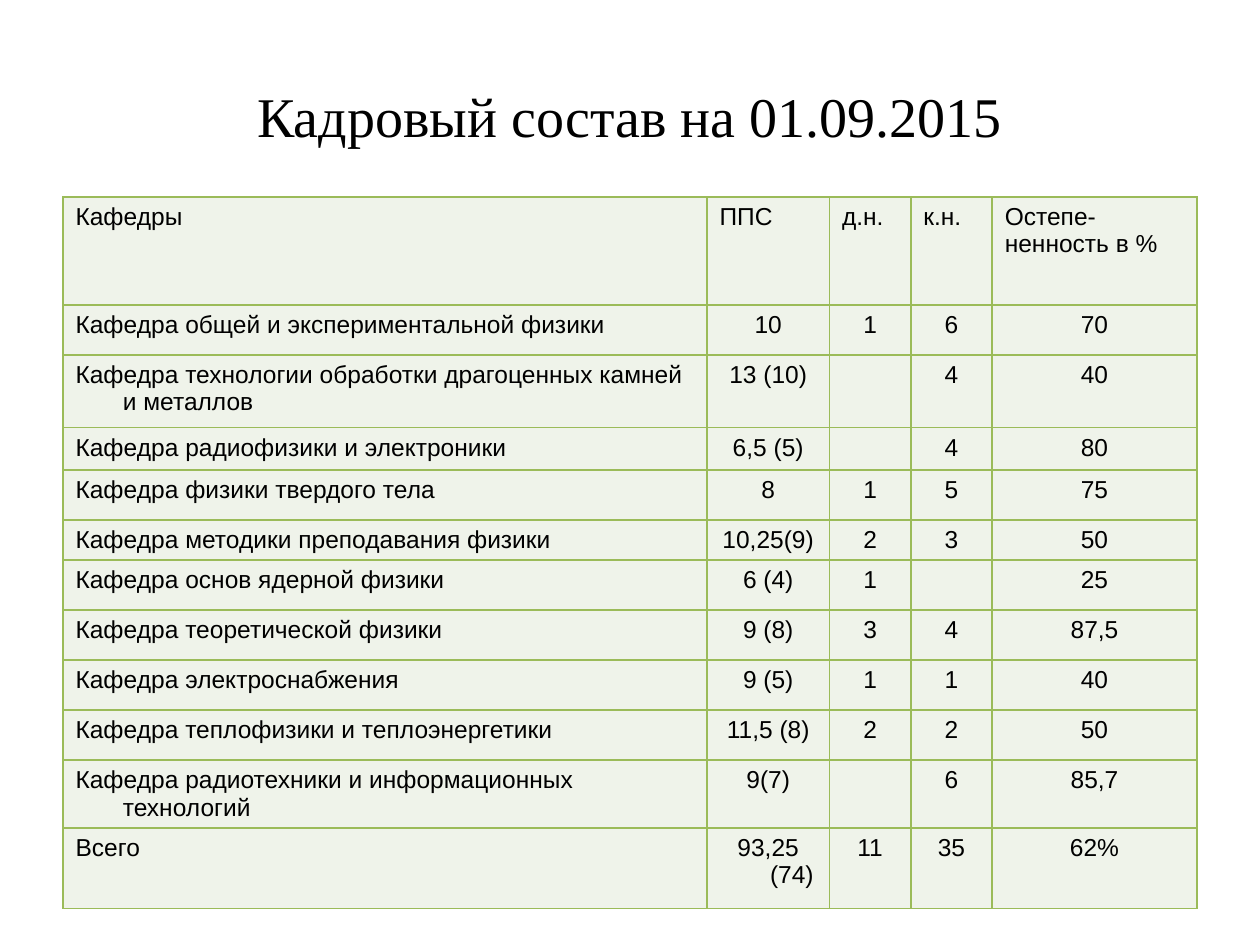
from pptx import Presentation
from pptx.dml.color import RGBColor
from pptx.enum.text import MSO_ANCHOR, PP_ALIGN
from pptx.oxml.ns import qn
from pptx.util import Pt
from lxml.etree import SubElement

BLACK = RGBColor(0x00, 0x00, 0x00)
GREEN = RGBColor(0x9B, 0xBB, 0x59)
PALE = RGBColor(0xEF, 0xF3, 0xEA)

TITLE = "Кадровый состав на 01.09.2015"
HEADER = ("Кафедры", "ППС", "д.н.", "к.н.", "Остепе-\nненность в %")
STAFF = [
    ("Кафедра общей и экспериментальной физики", "10", "1", "6", "70"),
    ("Кафедра технологии обработки драгоценных камней и металлов", "13 (10)", "", "4", "40"),
    ("Кафедра радиофизики и электроники", "6,5 (5)", "", "4", "80"),
    ("Кафедра физики твердого тела", "8", "1", "5", "75"),
    ("Кафедра методики преподавания физики", "10,25(9)", "2", "3", "50"),
    ("Кафедра основ ядерной физики", "6 (4)", "1", "", "25"),
    ("Кафедра теоретической физики", "9 (8)", "3", "4", "87,5"),
    ("Кафедра электроснабжения", "9 (5)", "1", "1", "40"),
    ("Кафедра теплофизики и теплоэнергетики", "11,5 (8)", "2", "2", "50"),
    ("Кафедра радиотехники и информационных технологий", "9(7)", "", "6", "85,7"),
    ("Всего", "93,25 (74)", "11", "35", "62%"),
]
COL_WIDTHS = (368, 70, 46.5, 46.5, 117)
ROW_HEIGHTS = (61.7, 28.6, 41.5, 22.5, 28.6, 22.5, 28.6, 28.6, 28.6, 28.6, 38, 46)
LEFT, TABLE_TOP = 36, 112.5
TEXT_SIZE = Pt(14)
HANGING = Pt(27)


def format_run(r, font, size):
    r.font.name = font
    r.font.size = size
    r.font.color.rgb = BLACK


def add_borders(cell):
    tcPr = cell._tc.get_or_add_tcPr()
    for i, side in enumerate(("a:lnL", "a:lnR", "a:lnT", "a:lnB")):
        ln = tcPr.makeelement(qn(side), {"w": str(Pt(1))})
        fill = SubElement(ln, qn("a:solidFill"))
        SubElement(fill, qn("a:srgbClr"), val=str(GREEN))
        tcPr.insert(i, ln)


def fill_cell(cell, text, align):
    cell.fill.solid()
    cell.fill.fore_color.rgb = PALE
    add_borders(cell)
    cell.text_frame.text = text
    for p in cell.text_frame.paragraphs:
        p.alignment = align
        pPr = p._p.get_or_add_pPr()
        pPr.set("marL", str(HANGING))
        pPr.set("indent", str(-HANGING))
        for r in p.runs:
            format_run(r, "Arial", TEXT_SIZE)
        if not p.runs:
            SubElement(p._p, qn("a:endParaRPr"), sz=str(int(TEXT_SIZE.pt * 100)))


prs = Presentation()
prs.slide_width, prs.slide_height = Pt(720), Pt(540)
slide = prs.slides.add_slide(prs.slide_layouts[5])

title = slide.shapes.title
title.left, title.top, title.width, title.height = Pt(LEFT), Pt(36), Pt(648), Pt(60)
tf = title.text_frame
tf.text = TITLE
tf.vertical_anchor = MSO_ANCHOR.MIDDLE
tf.paragraphs[0].alignment = PP_ALIGN.CENTER
format_run(tf.paragraphs[0].runs[0], "Times New Roman", Pt(32))

rows = [HEADER] + STAFF
table = slide.shapes.add_table(
    len(rows), len(HEADER), Pt(LEFT), Pt(TABLE_TOP),
    Pt(sum(COL_WIDTHS)), Pt(sum(ROW_HEIGHTS))).table
table.first_row = False
table.horz_banding = False
for column, width in zip(table.columns, COL_WIDTHS):
    column.width = Pt(width)
for row, height in zip(table.rows, ROW_HEIGHTS):
    row.height = Pt(height)
for i, values in enumerate(rows):
    for j, text in enumerate(values):
        align = PP_ALIGN.CENTER if i and j else PP_ALIGN.LEFT
        fill_cell(table.cell(i, j), text, align)

prs.save("out.pptx")
